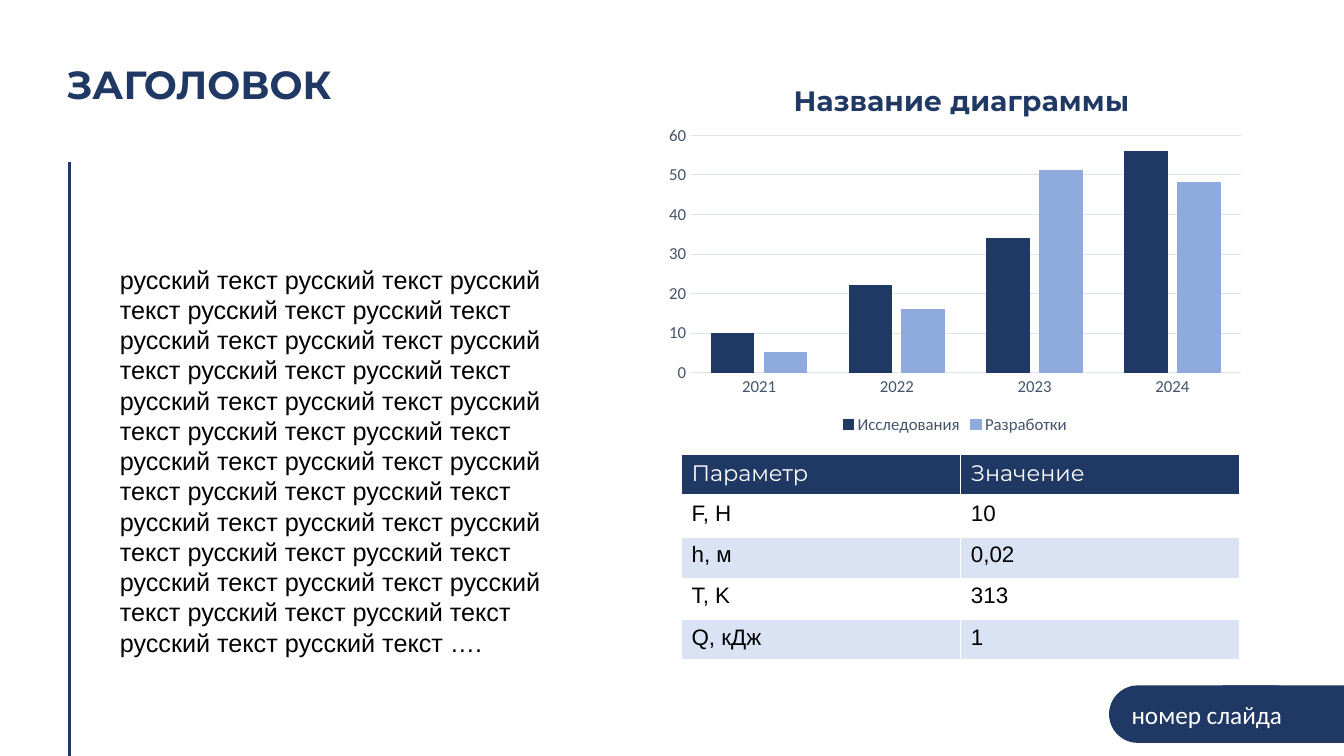
from lxml import etree
from pptx import Presentation
from pptx.chart.data import CategoryChartData
from pptx.dml.color import RGBColor
from pptx.enum.chart import XL_CHART_TYPE as ChartType, XL_LEGEND_POSITION as LegendPosition
from pptx.enum.chart import XL_TICK_MARK as TickMark
from pptx.enum.shapes import MSO_CONNECTOR as Connector, MSO_SHAPE as Shape
from pptx.enum.text import MSO_ANCHOR as Anchor, PP_ALIGN as Align
from pptx.oxml import parse_xml
from pptx.oxml.ns import nsdecls, qn
from pptx.util import Inches, Pt

NAVY = RGBColor(0x20, 0x38, 0x64)
BLUE = RGBColor(0x8F, 0xAA, 0xDC)
PALE = RGBColor(0xDA, 0xE3, 0xF3)
GRID = RGBColor(0xE0, 0xE5, 0xEB)
SLATE = RGBColor(0x44, 0x54, 0x6A)
WHITE = RGBColor(0xFF, 0xFF, 0xFF)
BLACK = RGBColor(0x00, 0x00, 0x00)

BODY_TEXT = " ".join(["русский текст"] * 32) + " …."
YEARS = ["2021", "2022", "2023", "2024"]
SERIES = [("Исследования", (10, 22, 34, 56), NAVY),
          ("Разработки", (5, 16, 51, 48), BLUE)]
TABLE_ROWS = [("Параметр", "Значение"), ("F, Н", "10"), ("h, м", "0,02"),
              ("T, K", "313"), ("Q, кДж", "1")]
ROW_HEIGHTS = [0.41, 0.41, 0.41, 0.41, 0.39]


def set_font(font, name, size, color, bold=False):
    font.name, font.size, font.bold = name, Pt(size), bold
    font.color.rgb = color


def write(frame, text, name, size, color, bold=False, align=Align.LEFT):
    para = frame.paragraphs[0]
    para.alignment = align
    span = para.add_run()
    span.text = text
    set_font(span.font, name, size, color, bold)


def place(shape, left, top, width, height):
    shape.left, shape.top = Inches(left), Inches(top)
    shape.width, shape.height = Inches(width), Inches(height)


def add_title(page, text):
    title = page.shapes.title
    place(title, 0.56, 0.55, 2.93, 0.57)
    title.text_frame.word_wrap = False
    title.text_frame.vertical_anchor = Anchor.TOP
    write(title.text_frame, text, "Montserrat", 28, NAVY, bold=True)


def add_body(page, text):
    box = page.shapes.add_textbox(Inches(1.09), Inches(2.57), Inches(4.95), Inches(4.04))
    box.text_frame.word_wrap = True
    write(box.text_frame, text, "Arial", 18, BLACK)


def add_panel(page, kind, left, width):
    panel = page.shapes.add_shape(kind, Inches(left), Inches(6.8), Inches(width), Inches(0.57))
    panel.shadow.inherit = False
    panel.fill.solid()
    panel.fill.fore_color.rgb = NAVY
    panel.line.fill.background()
    return panel


def add_page_badge(page, text):
    add_panel(page, Shape.RECTANGLE, 12.12, 1.21)
    pill = add_panel(page, Shape.ROUNDED_RECTANGLE, 11, 1.94)
    pill.adjustments[0] = 0.5
    pill.text_frame.vertical_anchor = Anchor.MIDDLE
    write(pill.text_frame, text, "Calibri", 18, WHITE, align=Align.CENTER)


def add_side_line(page):
    line = page.shapes.add_connector(
        Connector.STRAIGHT, Inches(0.69), Inches(1.61), Inches(0.69), Inches(7.5))
    line.line.color.rgb = NAVY
    line.line.width = Pt(2)
    etree.SubElement(line._element.spPr, qn("a:effectLst"))


def set_layout(parent, index, **fractions):
    """Fix a chart part at fractions of the chart area."""
    for old in parent.findall(qn("c:layout")):
        parent.remove(old)
    target = '<c:layoutTarget val="inner"/>' if "w" in fractions else ""
    modes = "".join(f'<c:{key}Mode val="edge"/>' for key in "xy")
    values = "".join(f'<c:{key} val="{value}"/>' for key, value in fractions.items())
    parent.insert(index, parse_xml(
        f'<c:layout {nsdecls("c")}><c:manualLayout>{target}{modes}{values}'
        '</c:manualLayout></c:layout>'))


def style_axis(axis):
    axis.major_tick_mark = axis.minor_tick_mark = TickMark.NONE
    set_font(axis.tick_labels.font, "Calibri", 12, SLATE)


def add_year_chart(page, title):
    data = CategoryChartData()
    data.categories = YEARS
    for name, values, _ in SERIES:
        data.add_series(name, values)
    chart = page.shapes.add_chart(ChartType.COLUMN_CLUSTERED, Inches(6.52), Inches(0.52),
                                  Inches(5.91), Inches(3.83), data).chart
    set_font(chart.font, "Calibri", 10, BLACK)

    # Title and plot position
    chart.has_title = True
    write(chart.chart_title.text_frame, title, "Montserrat", 20, NAVY,
          bold=True, align=Align.CENTER)
    set_layout(chart.chart_title._element, 1, x=0.22, y=0.06)
    plot_area = chart._chartSpace.chart.plotArea
    set_layout(plot_area, 0, x=0.055, y=0.215, w=0.925, h=0.615)

    # Columns
    plot = chart.plots[0]
    plot.gap_width, plot.overlap, plot.vary_by_categories = 100, -24, False
    for series, (_, _, color) in zip(plot.series, SERIES):
        series.format.fill.solid()
        series.format.fill.fore_color.rgb = color
        series.format.line.color.rgb = color
        series.format.line.width = Pt(0.75)

    # Axes
    years, values = chart.category_axis, chart.value_axis
    style_axis(years)
    style_axis(values)
    values.minimum_scale, values.maximum_scale, values.major_unit = 0, 60, 10
    values.format.line.fill.background()
    for rule in (years.format.line, values.major_gridlines.format.line):
        rule.color.rgb = GRID
        rule.width = Pt(0.75)

    # Legend
    chart.has_legend = True
    chart.legend.position = LegendPosition.BOTTOM
    chart.legend.include_in_layout = False
    set_font(chart.legend.font, "Calibri", 12, SLATE)


def set_borders(cell, bottom):
    properties = cell._tc.get_or_add_tcPr()
    widths = {"lnL": 1, "lnR": 1, "lnT": 1, "lnB": bottom}
    for index, (side, width) in enumerate(widths.items()):
        properties.insert(index, parse_xml(
            f'<a:{side} {nsdecls("a")} w="{Pt(width)}"><a:solidFill>'
            f'<a:srgbClr val="{WHITE}"/></a:solidFill></a:{side}>'))


def add_value_table(page):
    table = page.shapes.add_table(len(TABLE_ROWS), 2, Inches(6.76), Inches(4.51),
                                  Inches(5.54), Inches(sum(ROW_HEIGHTS))).table
    for row, height in zip(table.rows, ROW_HEIGHTS):
        row.height = Inches(height)
    for row, texts in enumerate(TABLE_ROWS):
        header = row == 0
        for column, text in enumerate(texts):
            cell = table.cell(row, column)
            cell.fill.solid()
            cell.fill.fore_color.rgb = NAVY if header else (PALE, WHITE)[row % 2]
            set_borders(cell, bottom=3 if header else 1)
            write(cell.text_frame, text, "Montserrat" if header else "Arial", 16,
                  WHITE if header else BLACK)


def main():
    deck = Presentation()
    deck.slide_width, deck.slide_height = Inches(13.33), Inches(7.5)
    page = deck.slides.add_slide(deck.slide_layouts.get_by_name("Title Only"))
    add_title(page, "ЗАГОЛОВОК")
    add_body(page, BODY_TEXT)
    add_page_badge(page, "номер слайда")
    add_year_chart(page, "Название диаграммы")
    add_value_table(page)
    add_side_line(page)
    deck.save("out.pptx")


if __name__ == "__main__":
    main()
